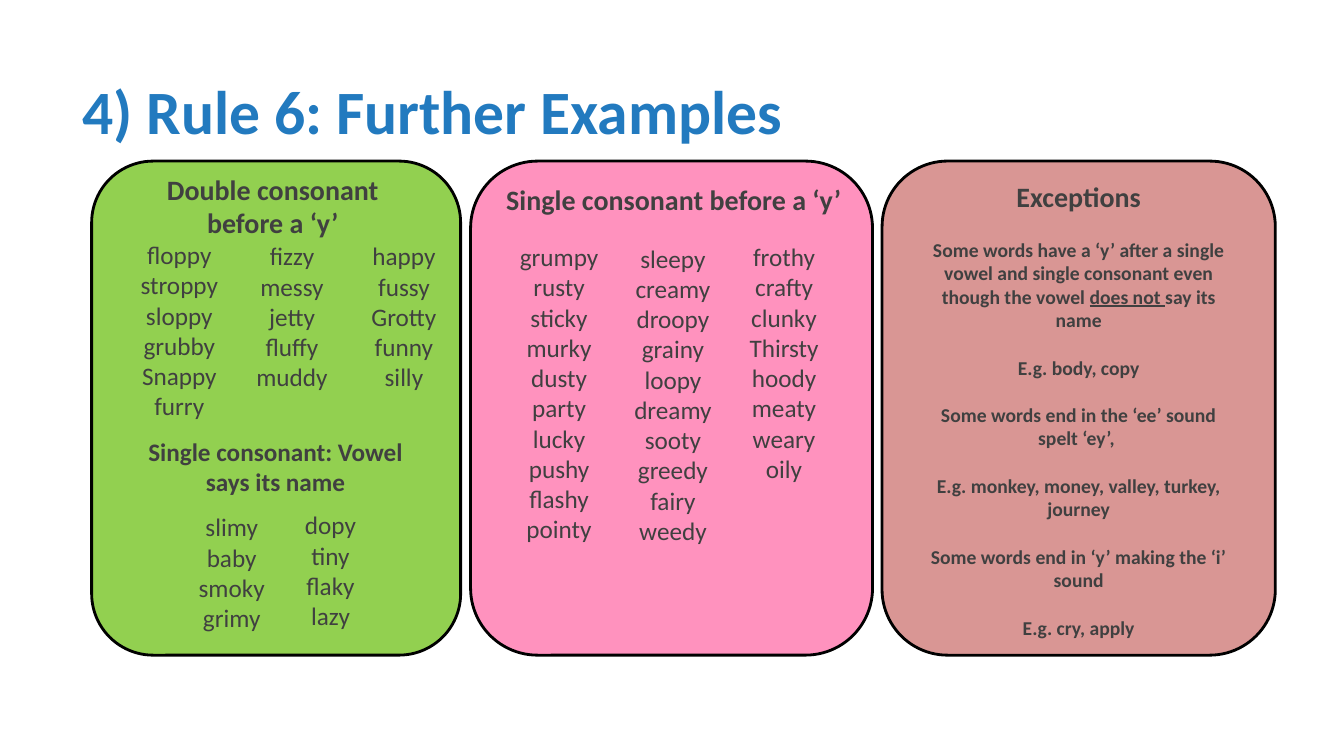
from pptx import Presentation
from pptx.dml.color import RGBColor
from pptx.enum.shapes import MSO_SHAPE as Shape
from pptx.enum.text import MSO_ANCHOR as Anchor, PP_ALIGN as Align
from pptx.util import Cm, Pt

BLUE = RGBColor(0x22, 0x7A, 0xBF)
GREY = RGBColor(0x40, 0x40, 0x40)
BLACK = RGBColor(0x00, 0x00, 0x00)
GREEN = RGBColor(0x92, 0xD0, 0x50)
PINK = RGBColor(0xFF, 0x92, 0xBE)
ROSE = RGBColor(0xD9, 0x96, 0x94)

LINE_HEIGHT = 0.775
COLUMN_WIDTH = 3.6

EXCEPTIONS = [
    "Some words have a ‘y’ after a single vowel and single consonant "
    "even though the vowel does not say its name",
    "E.g. body, copy",
    "Some words end in the ‘ee’ sound spelt ‘ey’, ",
    "E.g. monkey, money, valley, turkey, journey",
    "Some words end in ‘y’ making the ‘i’ sound",
    "E.g. cry, apply",
]


def add_text(slide, box, paragraphs, size=18, bold=False, color=GREY,
             align=Align.CENTER, anchor=Anchor.TOP, gap=0, underlined=None):
    shape = slide.shapes.add_textbox(*(Cm(length) for length in box))
    frame = shape.text_frame
    frame.word_wrap = True
    frame.vertical_anchor = anchor
    for index, text in enumerate(paragraphs):
        paragraph = frame.paragraphs[0] if index == 0 else frame.add_paragraph()
        paragraph.alignment = align
        if index and gap:
            paragraph.space_before = Pt(gap)
        parts = text.partition(underlined) if underlined else [text]
        for part in filter(None, parts):
            run = paragraph.add_run()
            run.text = part
            run.font.name = "Calibri"
            run.font.size = Pt(size)
            run.font.bold = bold
            run.font.color.rgb = color
            if part == underlined:
                run.font.underline = True


def add_panel(slide, box, fill):
    shape = slide.shapes.add_shape(
        Shape.ROUNDED_RECTANGLE, *(Cm(length) for length in box))
    shape.shadow.inherit = False
    shape.fill.solid()
    shape.fill.fore_color.rgb = fill
    shape.line.color.rgb = BLACK
    shape.line.width = Pt(2)


def add_word_columns(slide, left, top, columns):
    for x, y, words in columns:
        word_list = words.split()
        height = LINE_HEIGHT * len(word_list) + 0.25
        add_text(slide, (left + x, top + y, COLUMN_WIDTH, height), word_list)


def add_title(slide, box):
    add_text(slide, box, ["4) Rule 6: Further Examples"], size=44, bold=True,
             color=BLUE, align=Align.LEFT, anchor=Anchor.MIDDLE)


def add_double_consonants(slide, box):
    left, top, width, height = box
    add_panel(slide, box, GREEN)
    add_text(slide, (left + 0.97, top + 0.15, 7.19, 1.96),
             ["Double consonant before a ‘y’"], size=20, bold=True)
    add_text(slide, (left + 1.04, top + 6.81, 7.19, 1.8),
             ["Single consonant: Vowel says its name"], bold=True)
    add_word_columns(slide, left, top, [
        (0.41, 1.85, "floppy stroppy sloppy grubby Snappy furry"),
        (3.25, 1.88, "fizzy messy jetty fluffy muddy"),
        (6.07, 1.88, "happy fussy Grotty funny silly"),
        (1.73, 8.71, "slimy baby smoky grimy"),
        (4.22, 8.66, "dopy tiny flaky lazy"),
    ])


def add_single_consonants(slide, box):
    left, top, width, height = box
    add_panel(slide, box, PINK)
    add_text(slide, (left + 0.56, top + 0.41, 9.12, 1.12),
             ["Single consonant before a ‘y’"], size=20, bold=True)
    add_word_columns(slide, left, top, [
        (0.43, 1.9, "grumpy rusty sticky murky dusty party lucky pushy flashy pointy"),
        (3.3, 1.94, "sleepy creamy droopy grainy loopy dreamy sooty greedy fairy weedy"),
        (6.1, 1.9, "frothy crafty clunky Thirsty hoody meaty weary oily"),
    ])


def add_exceptions(slide, box):
    left, top, width, height = box
    add_panel(slide, box, ROSE)
    add_text(slide, (left, top + 0.33, width, 1.12),
             ["Exceptions"], size=20, bold=True)
    add_text(slide, (left + 0.79, top + 1.8, 8.33, 10.44), EXCEPTIONS,
             size=14, bold=True, gap=17, underlined="does not ")


def main():
    presentation = Presentation()
    presentation.slide_width = Cm(33.87)
    presentation.slide_height = Cm(19.05)
    slide = presentation.slides.add_slide(presentation.slide_layouts[6])
    panel_top, panel_height = 4.06, 12.45
    add_title(slide, (1.83, 0.94, 29.21, 3.68))
    add_double_consonants(slide, (2.31, panel_top, 9.3, panel_height))
    add_single_consonants(slide, (11.86, panel_top, 10.13, panel_height))
    add_exceptions(slide, (22.23, panel_top, 9.91, panel_height))
    presentation.save("out.pptx")


if __name__ == "__main__":
    main()
